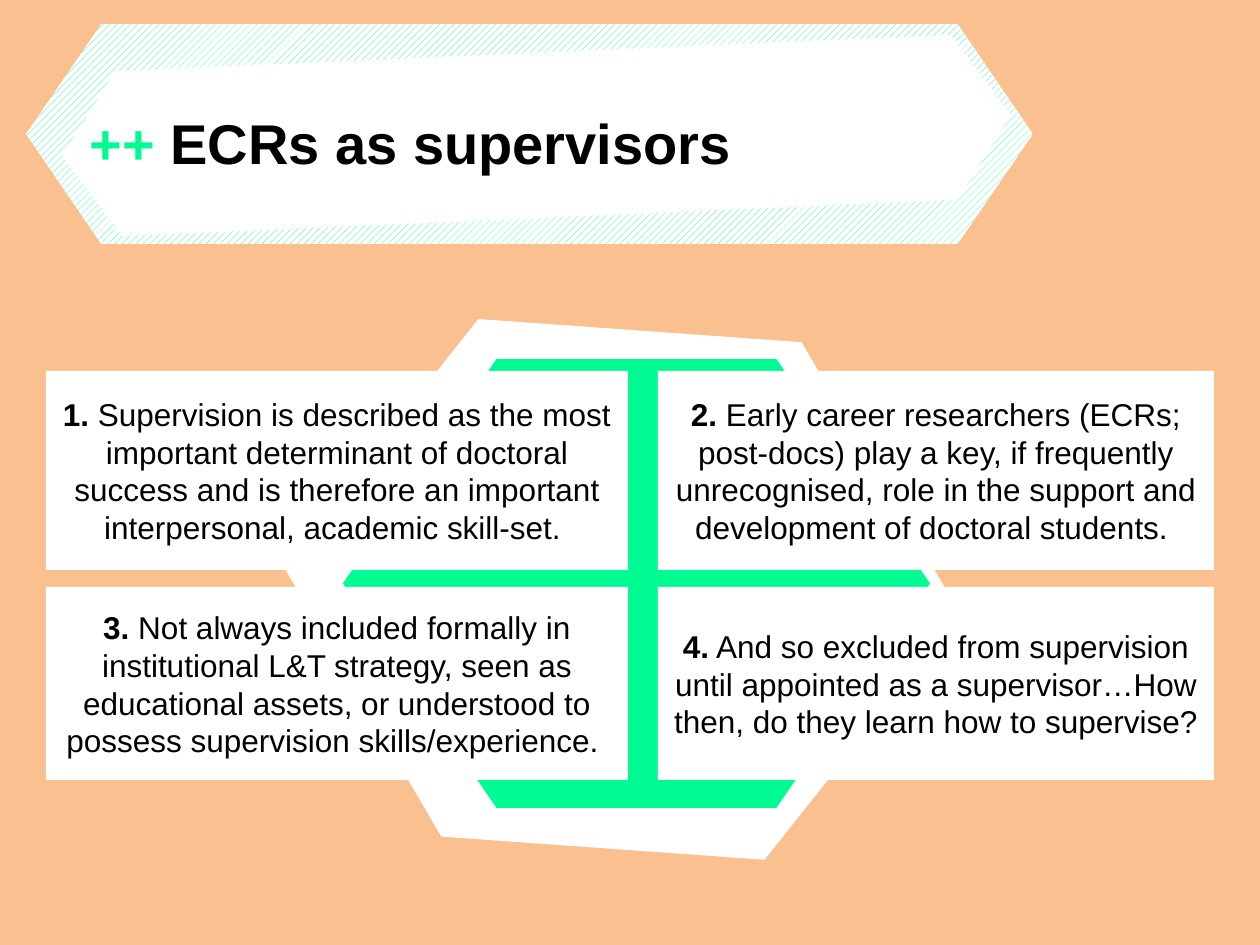
from typing import NamedTuple

from pptx import Presentation
from pptx import util as u
from pptx.dml.color import RGBColor
from pptx.enum import dml, shapes, text

EMU_PER_PX = 914400 / 126
FONT = "Arial"
PEACH, GREEN, WHITE, BLACK = "FAC090", "00FB92", "FFFFFF", "000000"


class Box(NamedTuple):
    left: int
    top: int
    width: int
    height: int


class Hexagon(NamedTuple):
    box: Box
    color: str
    rotation: float = 0
    hatched: bool = False


class Card(NamedTuple):
    column: int
    row: int
    number: str
    body: str


COLUMNS = [(46, 582), (658, 556)]  # left, width
ROWS = [(371, 199), (587, 193)]  # top, height

HEXAGONS = [
    Hexagon(Box(282, 330, 679, 519), WHITE, rotation=4.1),
    Hexagon(Box(343, 359, 587, 449), GREEN),
    Hexagon(Box(26, 24, 1007, 220), GREEN, hatched=True),
    Hexagon(Box(62, 53, 949, 165), WHITE, rotation=357.5),
]
CARDS = [
    Card(0, 0, "1.", " Supervision is described as the most important determinant of "
         "doctoral success and is therefore an important interpersonal, academic skill-set. "),
    Card(1, 0, "2.", " Early career researchers (ECRs; post-docs) play a key, if frequently "
         "unrecognised, role in the support and development of doctoral students. "),
    Card(0, 1, "3.", " Not always included formally in institutional L&T strategy, seen as "
         "educational assets, or understood to possess supervision skills/experience. "),
    Card(1, 1, "4.", " And so excluded from supervision until appointed as a "
         "supervisor…How then, do they learn how to supervise?"),
]


def px(value: int) -> u.Emu:
    return u.Emu(round(value * EMU_PER_PX))


def rgb(color: str) -> RGBColor:
    return RGBColor.from_string(color)


def add_run(paragraph, content: str, *, size: int, color: str = BLACK, bold: bool = False):
    run = paragraph.add_run()
    run.text = content
    run.font.name = FONT
    run.font.size = u.Pt(size)
    run.font.bold = bold
    run.font.color.rgb = rgb(color)


def add_plain_shape(slide, kind, box: Box, color: str):
    """Add a filled preset shape with no outline or shadow."""
    shape = slide.shapes.add_shape(kind, *map(px, box))
    shape.shadow.inherit = False
    shape.fill.solid()
    shape.fill.fore_color.rgb = rgb(color)
    shape.line.fill.background()
    return shape


def add_hexagon(slide, hexagon: Hexagon):
    shape = add_plain_shape(slide, shapes.MSO_SHAPE.HEXAGON, hexagon.box, hexagon.color)
    shape.adjustments[0] = 0.342
    shape.rotation = hexagon.rotation
    if hexagon.hatched:
        shape.fill.patterned()
        shape.fill.pattern = dml.MSO_PATTERN.WIDE_UPWARD_DIAGONAL
        shape.fill.fore_color.rgb = rgb(hexagon.color)
        shape.fill.back_color.rgb = rgb(WHITE)


def add_card(slide, card: Card):
    left, width = COLUMNS[card.column]
    top, height = ROWS[card.row]
    shape = add_plain_shape(
        slide, shapes.MSO_SHAPE.RECTANGLE, Box(left, top, width, height), WHITE)
    frame = shape.text_frame
    frame.word_wrap = True
    frame.vertical_anchor = text.MSO_ANCHOR.MIDDLE
    paragraph = frame.paragraphs[0]
    paragraph.alignment = text.PP_ALIGN.CENTER
    add_run(paragraph, card.number, size=18, bold=True)
    add_run(paragraph, card.body, size=18)


def add_title(slide, box: Box):
    frame = slide.shapes.add_textbox(*map(px, box)).text_frame
    frame.word_wrap = True
    frame.auto_size = text.MSO_AUTO_SIZE.SHAPE_TO_FIT_TEXT
    paragraph = frame.paragraphs[0]
    add_run(paragraph, "++", size=32, color=GREEN, bold=True)
    add_run(paragraph, " ECRs as supervisors", size=32, bold=True)


def main():
    presentation = Presentation()
    presentation.slide_width, presentation.slide_height = px(1260), px(945)
    slide = presentation.slides.add_slide(presentation.slide_layouts[6])
    slide.background.fill.solid()
    slide.background.fill.fore_color.rgb = rgb(PEACH)
    for hexagon in HEXAGONS:
        add_hexagon(slide, hexagon)
    for card in CARDS:
        add_card(slide, card)
    add_title(slide, Box(77, 102, 897, 81))
    presentation.save("out.pptx")


if __name__ == "__main__":
    main()
